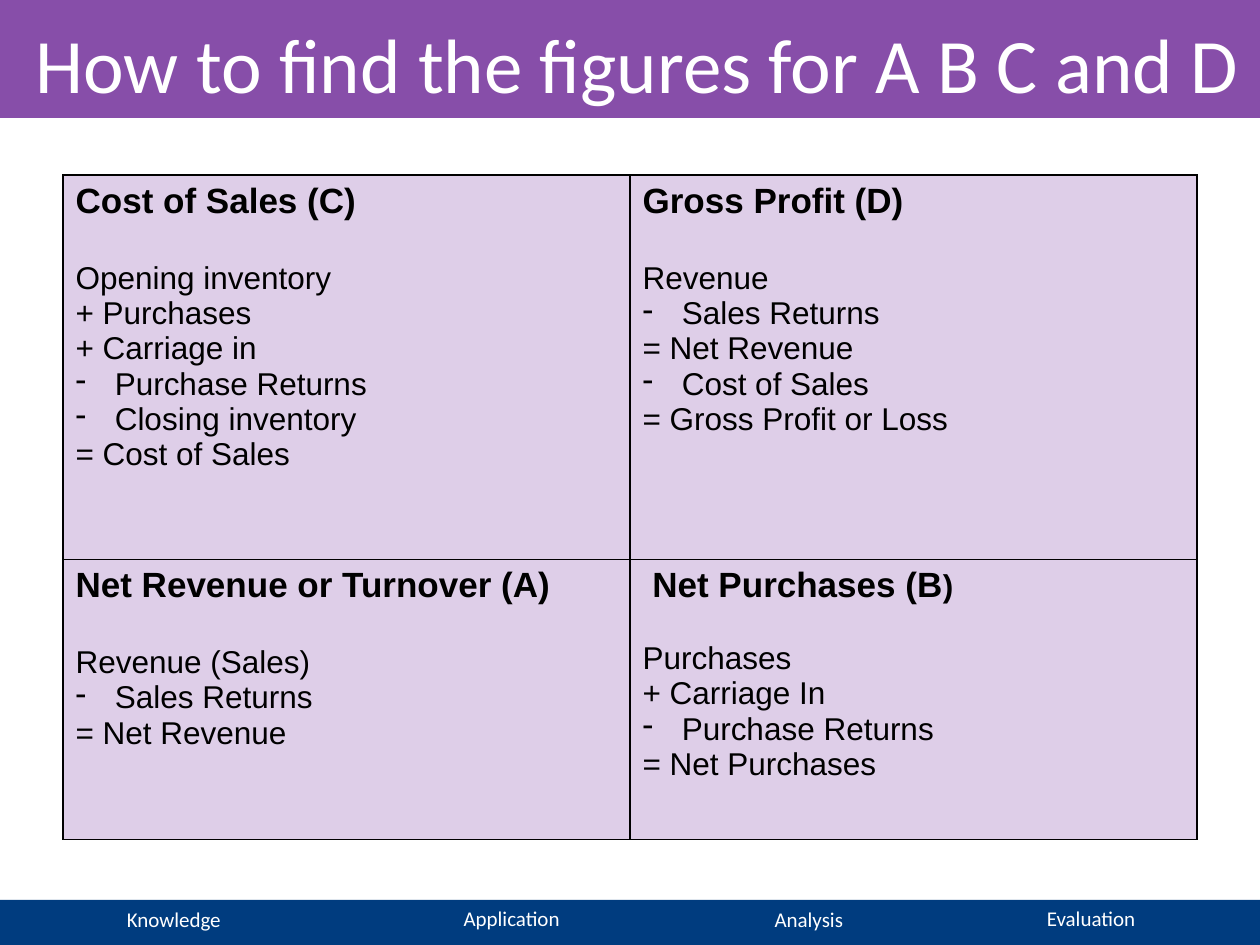
"""Build the slide on how to find the figures for A, B, C and D."""
import pptx
import pptx.dml.color
import pptx.enum.shapes
import pptx.enum.text
import pptx.oxml
import pptx.oxml.ns
import pptx.util

Cm = pptx.util.Cm
Pt = pptx.util.Pt
CENTER = pptx.enum.text.PP_ALIGN.CENTER
PURPLE, NAVY, LILAC = "874EA9", "003C7F", "DECEE8"
WHITE, BLACK = "FFFFFF", "000000"

FOOTER = [
    ("Knowledge", 0.1, 18.16),
    ("Application", 6.91, 18.14),
    ("Analysis", 12.9, 18.16),
    ("Evaluation", 18.59, 18.14),
]
CELLS = [
    [
        ([("Cost of Sales (C)", 20)], 23,
         ["Opening inventory", "+ Purchases", "+ Carriage in", "- Purchase Returns",
          "- Closing inventory", "= Cost of Sales"]),
        ([("Gross Profit (D)", 20)], 23,
         ["Revenue", "- Sales Returns", "= Net Revenue", "- Cost of Sales",
          "= Gross Profit or Loss"]),
    ],
    [
        ([("Net Revenue or Turnover (A)", 20)], 23,
         ["Revenue (Sales)", "- Sales Returns", "= Net Revenue"]),
        ([(" Net Purchases (B", 20), (")", 18)], 20.7,
         ["Purchases", "+ Carriage In", "- Purchase Returns", "= Net Purchases"]),
    ],
]


def color(value):
    """Turn a hex string into a colour."""
    return pptx.dml.color.RGBColor.from_string(value)


def xml(markup):
    """Parse one drawing element, given without its namespace."""
    tag, _, rest = markup.partition(" ")
    return pptx.oxml.parse_xml(f"<a:{tag} {pptx.oxml.ns.nsdecls('a')} {rest}")


def add_span(para, text, size, font, fill, bold=False):
    """Add one formatted run to a paragraph."""
    span = para.add_run()
    span.text = text
    span.font.size = Pt(size)
    span.font.name = font
    span.font.bold = bold
    span.font.color.rgb = color(fill)


def add_band(page, top, height, fill):
    """Add a full-width coloured band."""
    band = page.shapes.add_shape(
        pptx.enum.shapes.MSO_SHAPE.RECTANGLE, 0, Cm(top), Cm(25.4), Cm(height))
    band.shadow.inherit = False
    band.fill.solid()
    band.fill.fore_color.rgb = color(fill)
    band.line.fill.background()
    return band


def add_label(page, text, left, top):
    """Add a centred footer label."""
    box = page.shapes.add_textbox(Cm(left), Cm(top), Cm(6.81), Cm(0.77))
    box.text_frame.word_wrap = True
    para = box.text_frame.paragraphs[0]
    para.alignment = CENTER
    add_span(para, text, 12, "Calibri", WHITE)


def set_title(page, text):
    """Place and fill the title, in front of its band."""
    title = page.shapes.title
    title.left, title.top, title.width, title.height = Cm(0.3), 0, Cm(25.1), Cm(2.51)
    title.element.getparent().append(title.element)
    para = title.text_frame.paragraphs[0]
    para.alignment = CENTER
    add_span(para, text, 44, "Calibri", WHITE)


def set_borders(cell):
    """Draw thin black lines around a cell."""
    properties = cell._tc.get_or_add_tcPr()
    for index, side in enumerate(("lnL", "lnR", "lnT", "lnB")):
        line = xml(f'{side} w="{Pt(1)}"><a:solidFill><a:srgbClr val="{BLACK}"/>'
                   f'</a:solidFill></a:{side}>')
        properties.insert(index, line)


def add_dash(para):
    """Give a paragraph a hanging dash bullet."""
    properties = para._p.get_or_add_pPr()
    properties.set("marL", str(Cm(0.79)))
    properties.set("indent", str(-Cm(0.79)))
    properties.append(xml('buChar char="-"/>'))


def fill_cell(cell, heading, gap, steps):
    """Write a bold heading and the steps of its calculation."""
    cell.fill.solid()
    cell.fill.fore_color.rgb = color(LILAC)
    set_borders(cell)
    first = cell.text_frame.paragraphs[0]
    first.space_after = Pt(gap)
    for text, size in heading:
        add_span(first, text, size, "Arial", BLACK, bold=True)
    for step in steps:
        para = cell.text_frame.add_paragraph()
        if step.startswith("- "):
            add_dash(para)
        add_span(para, step.removeprefix("- "), 18, "Arial", BLACK)


def add_formulas(page):
    """Add the table of four calculations."""
    table = page.shapes.add_table(2, 2, Cm(1.27), Cm(3.53), Cm(22.86), Cm(13.39)).table
    table.first_row = table.horz_banding = False
    for row, height, contents in zip(table.rows, (7.75, 5.64), CELLS):
        row.height = Cm(height)
        for cell, content in zip(row.cells, contents):
            fill_cell(cell, *content)


def main():
    """Build and save the deck."""
    deck = pptx.Presentation()
    deck.slide_width, deck.slide_height = Cm(25.4), Cm(19.05)
    page = deck.slides.add_slide(deck.slide_layouts.get_by_name("Title Only"))
    header = add_band(page, 0, 2.34, PURPLE)
    header.line.color.rgb = color(PURPLE)
    header.line.width = Pt(2)
    add_band(page, 18.14, 0.91, NAVY)
    for text, left, top in FOOTER:
        add_label(page, text, left, top)
    set_title(page, "How to find the figures for A B C and D")
    add_formulas(page)
    deck.save("out.pptx")


if __name__ == "__main__":
    main()
